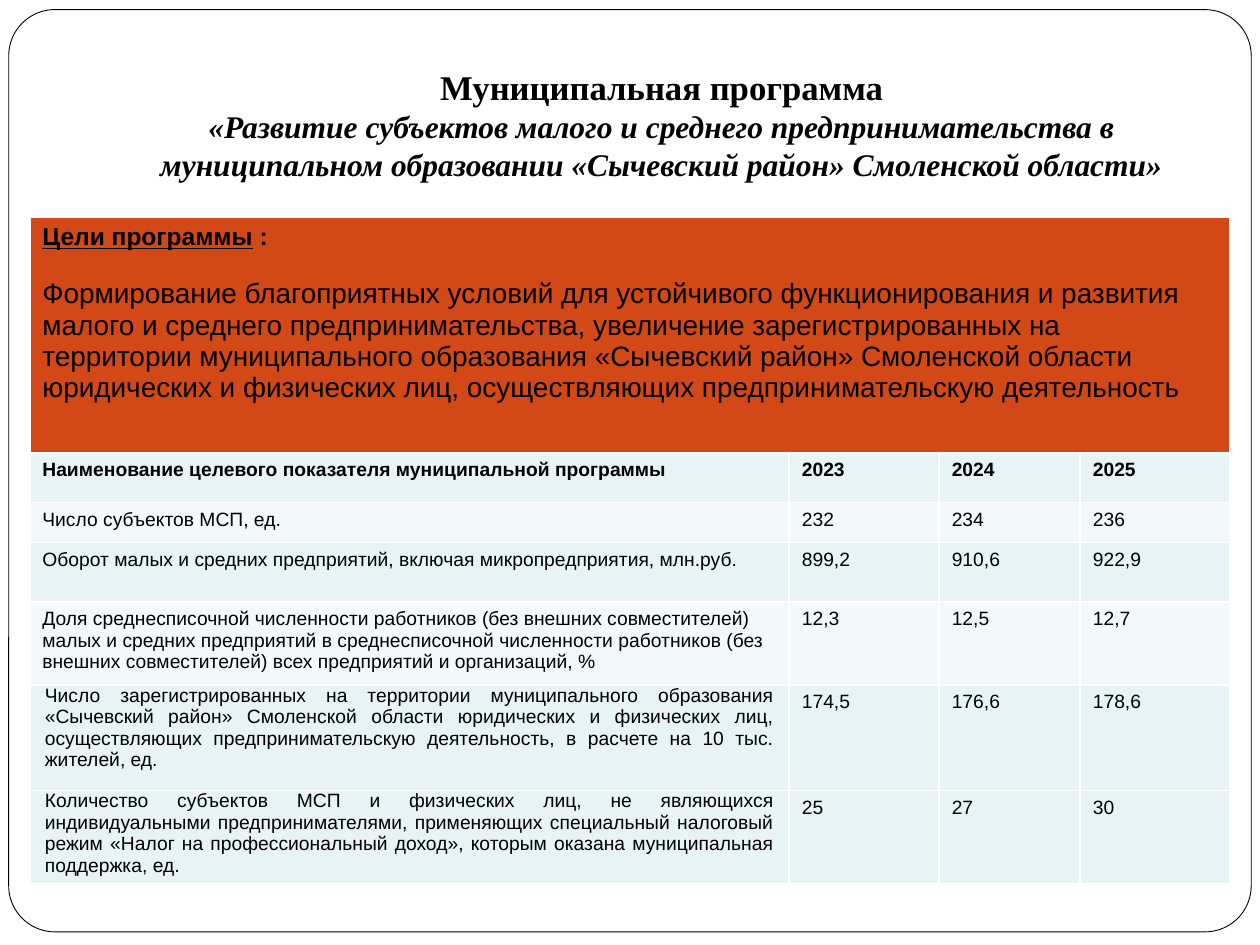
"""Builds the slide of a municipal programme with its goal and target indicators."""
from dataclasses import dataclass

from pptx import Presentation
from pptx.dml.color import RGBColor
from pptx.enum.shapes import MSO_SHAPE
from pptx.enum.text import MSO_ANCHOR, MSO_AUTO_SIZE, PP_ALIGN
from pptx.slide import Slide
from pptx.util import Pt

BLACK = RGBColor(0x00, 0x00, 0x00)
WHITE = RGBColor(0xFF, 0xFF, 0xFF)
ORANGE = RGBColor(0xD3, 0x48, 0x17)
MINT = RGBColor(0xE7, 0xF3, 0xF4)
PALE = RGBColor(0xF3, 0xF9, 0xFA)

TITLE = "Муниципальная программа"
SUBTITLE = (
    "«Развитие субъектов малого и среднего предпринимательства в "
    "муниципальном образовании «Сычевский район» Смоленской области»"
)
GOAL_LABEL = "Цели программы"
GOAL = (
    "Формирование благоприятных условий для устойчивого функционирования и "
    "развития малого и среднего предпринимательства, увеличение "
    "зарегистрированных на территории муниципального образования «Сычевский "
    "район» Смоленской области юридических и физических лиц, осуществляющих "
    "предпринимательскую деятельность"
)
INDICATORS = [
    ("Наименование целевого показателя муниципальной программы",
     "2023", "2024", "2025"),
    ("Число субъектов МСП, ед.", "232", "234", "236"),
    ("Оборот малых и средних предприятий, включая микропредприятия, млн.руб.",
     "899,2", "910,6", "922,9"),
    ("Доля среднесписочной численности работников (без внешних совместителей) "
     "малых и средних предприятий в среднесписочной численности работников "
     "(без внешних совместителей) всех предприятий и организаций, %",
     "12,3", "12,5", "12,7"),
    ("Число зарегистрированных на территории муниципального образования "
     "«Сычевский район» Смоленской области юридических и физических лиц, "
     "осуществляющих предпринимательскую деятельность, в расчете на 10 тыс. "
     "жителей, ед.", "174,5", "176,6", "178,6"),
    ("Количество субъектов МСП и физических лиц, не являющихся "
     "индивидуальными предпринимателями, применяющих специальный налоговый "
     "режим «Налог на профессиональный доход», которым оказана муниципальная "
     "поддержка, ед.", "25", "27", "30"),
]
ROW_FILLS = [MINT, PALE, MINT, PALE, MINT, MINT]
JUSTIFIED_FROM = 4
COL_WIDTHS = [434, 85.7, 80.6, 85.7]
ROW_HEIGHTS = [135, 28.2, 23, 33.8, 47.5, 60.3, 53.2]


@dataclass
class Builder:
    """Holds the style and the current slide."""

    s: Slide
    title_font: str = "Times New Roman"
    body_font: str = "Arial"
    body_size: float = 11

    def format_run(self, r, name, size, bold=False, italic=False):
        """Set the font of a run."""
        r.font.name = name
        r.font.size = Pt(size)
        r.font.bold = bold
        r.font.italic = italic
        r.font.color.rgb = BLACK

    def frame(self, left, top, width, height):
        """Draw the rounded frame behind the title."""
        sp = self.s.shapes.add_shape(MSO_SHAPE.ROUNDED_RECTANGLE, Pt(left),
                                     Pt(top), Pt(width), Pt(height))
        sp.adjustments[0] = 0.05
        sp.shadow.inherit = False
        sp.fill.solid()
        sp.fill.fore_color.rgb = WHITE
        sp.line.color.rgb = BLACK
        sp.line.width = Pt(0.5)
        self.s.shapes.title.element.addprevious(sp.element)

    def title(self, heading, subtitle, left, top, width, height):
        """Place and fill the title placeholder."""
        sp = self.s.shapes.title
        sp.left, sp.top = Pt(left), Pt(top)
        sp.width, sp.height = Pt(width), Pt(height)
        tf = sp.text_frame
        tf.word_wrap = True
        tf.auto_size = MSO_AUTO_SIZE.NONE
        tf.vertical_anchor = MSO_ANCHOR.BOTTOM
        tf.margin_bottom = Pt(7.2)
        tf.text = f"{heading}\v{subtitle}"
        p = tf.paragraphs[0]
        p.alignment = PP_ALIGN.CENTER
        first, second = p.runs
        self.format_run(first, self.title_font, 19.8, bold=True)
        self.format_run(second, self.title_font, 18, bold=True, italic=True)

    def table(self, left, top, col_widths, row_heights):
        """Add a table with the given columns and rows."""
        table = self.s.shapes.add_table(
            len(row_heights), len(col_widths), Pt(left), Pt(top),
            Pt(sum(col_widths)), Pt(sum(row_heights))).table
        for col, width in zip(table.columns, col_widths):
            col.width = Pt(width)
        for row, height in zip(table.rows, row_heights):
            row.height = Pt(height)
        return table

    def fill_cell(self, cell, color):
        """Give a cell a solid fill."""
        cell.fill.solid()
        cell.fill.fore_color.rgb = color

    def goal(self, table, label, text):
        """Fill the merged top row with the programme goal."""
        last = len(table.columns) - 1
        table.cell(0, 0).merge(table.cell(0, last))
        for cell in table.rows[0].cells:
            self.fill_cell(cell, ORANGE)
        tf = table.cell(0, 0).text_frame
        p = tf.paragraphs[0]
        for part, underline in ((label, True), (" :", False)):
            r = p.add_run()
            r.text = part
            self.format_run(r, self.body_font, 14, bold=True)
            r.font.underline = underline
        p = tf.add_paragraph()
        p.text = text
        p.space_before = Pt(16)
        self.format_run(p.runs[0], self.body_font, 16)

    def indicator(self, cells, values, color, bold, justified):
        """Fill one row with an indicator and its yearly values."""
        for cell, value in zip(cells, values):
            self.fill_cell(cell, color)
            cell.text_frame.text = value
            p = cell.text_frame.paragraphs[0]
            self.format_run(p.runs[0], self.body_font, self.body_size, bold)
        if justified:
            cell = cells[0]
            cell.margin_left = cell.margin_right = Pt(8.64)
            cell.margin_top = cell.margin_bottom = Pt(0)
            cell.text_frame.paragraphs[0].alignment = PP_ALIGN.JUSTIFY


def main():
    """Build and save the slide."""
    prs = Presentation()
    prs.slide_width, prs.slide_height = Pt(720), Pt(540)
    builder = Builder(prs.slides.add_slide(prs.slide_layouts[5]))
    builder.frame(5, 5.5, 710, 527)
    builder.title(TITLE, SUBTITLE, 72, 21.6, 612, 90)
    table = builder.table(17, 124, COL_WIDTHS, ROW_HEIGHTS)
    builder.goal(table, GOAL_LABEL, GOAL)
    for i, (values, color) in enumerate(zip(INDICATORS, ROW_FILLS)):
        builder.indicator(list(table.rows[i + 1].cells), values, color,
                          bold=i == 0, justified=i >= JUSTIFIED_FROM)
    prs.save("out.pptx")


if __name__ == "__main__":
    main()
